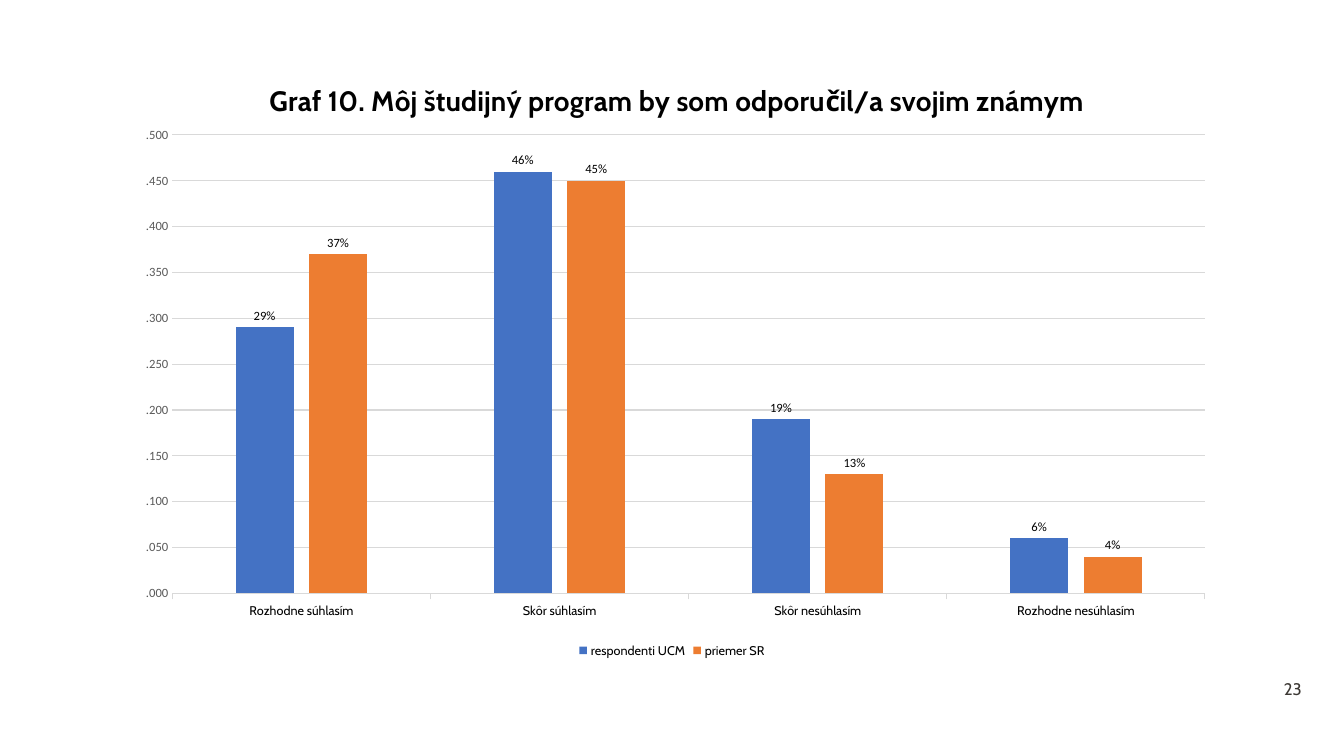
from lxml import etree
from pptx import Presentation
from pptx.chart.data import CategoryChartData
from pptx.dml.color import RGBColor
from pptx.enum.chart import XL_CHART_TYPE, XL_LABEL_POSITION, XL_LEGEND_POSITION, XL_TICK_MARK
from pptx.enum.text import MSO_ANCHOR, PP_ALIGN
from pptx.oxml.ns import qn
from pptx.util import Inches, Pt

COLUMNS = XL_CHART_TYPE.COLUMN_CLUSTERED
OUTSIDE_END = XL_LABEL_POSITION.OUTSIDE_END
BOTTOM = XL_LEGEND_POSITION.BOTTOM
NO_TICK, TICK_OUT = XL_TICK_MARK.NONE, XL_TICK_MARK.OUTSIDE
MIDDLE, RIGHT = MSO_ANCHOR.MIDDLE, PP_ALIGN.RIGHT

COLORS = {"text": "000000", "axis": "595959", "grid": "D9D9D9", "number": "3D3935",
          "ucm": "4472C4", "sr": "ED7D31"}
HEADING, BODY = "Cabin", "Calibri"

TITLE = "Graf 10. Môj študijný program by som odporučil/a svojim známym"
ANSWERS = ["Rozhodne súhlasím", "Skôr súhlasím", "Skôr nesúhlasím", "Rozhodne nesúhlasím"]
SERIES = [("respondenti UCM", "ucm", (0.29, 0.46, 0.19, 0.06)),
          ("priemer SR", "sr", (0.37, 0.45, 0.13, 0.04))]


def set_layout(parent, **fractions):
    """Place a chart part by fractions of the chart area."""
    for old in parent.findall(qn("c:layout")):
        parent.remove(old)
    layout = etree.Element(qn("c:layout"))
    text = parent.find(qn("c:tx"))
    parent.insert(0 if text is None else 1, layout)
    manual = etree.SubElement(layout, qn("c:manualLayout"))
    if "w" in fractions:
        etree.SubElement(manual, qn("c:layoutTarget")).set("val", "inner")
    for mode in ("xMode", "yMode"):
        etree.SubElement(manual, qn(f"c:{mode}")).set("val", "edge")
    for name, value in fractions.items():
        etree.SubElement(manual, qn(f"c:{name}")).set("val", str(value))


class SlideBuilder:
    def __init__(self, prs):
        self.slide = prs.slides.add_slide(prs.slide_layouts[6])

    def font(self, font, size, color="text", name=HEADING, bold=False):
        font.size, font.name, font.bold = Pt(size), name, bold
        font.color.rgb = RGBColor.from_string(COLORS[color])

    def line(self, line):
        line.color.rgb = RGBColor.from_string(COLORS["grid"])
        line.width = Pt(0.75)

    def page_number(self, number, x, y, w, h):
        tf = self.slide.shapes.add_textbox(Inches(x), Inches(y), Inches(w), Inches(h)).text_frame
        tf.word_wrap = True
        tf.vertical_anchor = MIDDLE
        p = tf.paragraphs[0]
        p.alignment = RIGHT
        r = p.add_run()
        r.text = number
        self.font(r.font, 12, "number")

    def column_chart(self, x, y, w, h):
        data = CategoryChartData(number_format="0%")
        data.categories = ANSWERS
        for name, _, values in SERIES:
            data.add_series(name, values)
        chart = self.slide.shapes.add_chart(
            COLUMNS, Inches(x), Inches(y), Inches(w), Inches(h), data).chart
        self.font(chart.font, 10, name=BODY)
        self.title(chart)
        self.axes(chart)
        self.columns(chart.plots[0])
        chart.has_legend = True
        chart.legend.position = BOTTOM
        chart.legend.include_in_layout = False
        self.font(chart.legend.font, 9)
        plot_area = chart.element.find(".//" + qn("c:plotArea"))
        set_layout(plot_area, x=0.049, y=0.134, w=0.932, h=0.753)

    def title(self, chart):
        chart.has_title = True
        r = chart.chart_title.text_frame.paragraphs[0].add_run()
        r.text = TITLE
        self.font(r.font, 20, bold=True)
        set_layout(chart.element.find(".//" + qn("c:title")), x=0.132, y=0.036)

    def axes(self, chart):
        answers, shares = chart.category_axis, chart.value_axis
        answers.major_tick_mark = TICK_OUT
        self.font(answers.tick_labels.font, 9)
        self.line(answers.format.line)
        shares.minimum_scale, shares.maximum_scale, shares.major_unit = 0, 0.5, 0.05
        shares.major_tick_mark = NO_TICK
        shares.format.line.fill.background()
        self.line(shares.major_gridlines.format.line)
        labels = shares.tick_labels
        labels.number_format, labels.number_format_is_linked = "#.000", False
        self.font(labels.font, 9, "axis", BODY)

    def columns(self, plot):
        plot.gap_width, plot.overlap = 219, -27
        plot.vary_by_categories = False
        for series, (_, color, _) in zip(plot.series, SERIES):
            series.format.fill.solid()
            series.format.fill.fore_color.rgb = RGBColor.from_string(COLORS[color])
            labels = series.data_labels
            labels.show_value = True
            labels.position = OUTSIDE_END
            labels.number_format, labels.number_format_is_linked = "0%", False
            self.font(labels.font, 9, name=BODY)


def main():
    prs = Presentation()
    prs.slide_width, prs.slide_height = Inches(13.33), Inches(7.5)
    s = SlideBuilder(prs)
    s.page_number("23", 12.25, 6.67, 0.76, 0.32)
    s.column_chart(1.17, 0.53, 10.99, 6.04)
    prs.save("out.pptx")


if __name__ == "__main__":
    main()
